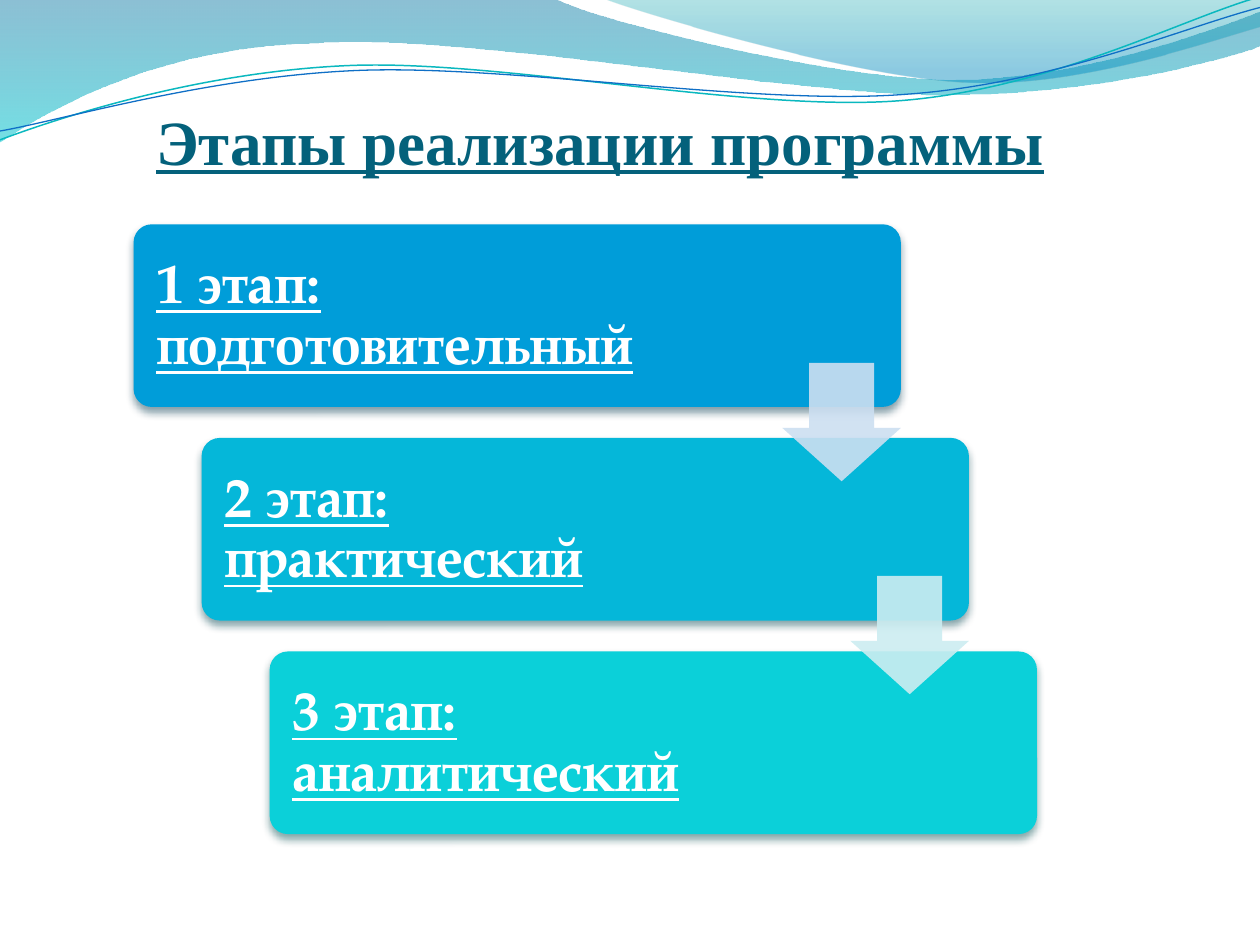
from math import cos, radians, sin

from lxml.etree import SubElement
from pptx import Presentation
from pptx.dml.color import RGBColor
from pptx.enum.shapes import MSO_SHAPE
from pptx.enum.text import MSO_ANCHOR, MSO_AUTO_SIZE, PP_ALIGN
from pptx.oxml.ns import qn
from pptx.util import Inches, Pt

STAGES = [
    ("1 этап: подготовительный", "009DD9", "00374C"),
    ("2 этап: практический", "05B7D9", "00424E"),
    ("3 этап: аналитический", "0BD0D9", "024B4E"),
]
ARROW_COLORS = ["CCDFF1", "CCEDF1"]
STEP_X, STEP_Y, ARROW_STEP_Y = 0.54, 1.695, 1.69
TILT = -2.7

WIDE_WAVE = [
    (0, 0), (4.4, -0.01), (4.76, 0.17, 6.64, 0.63, 7.58, 0.63),
    (8.53, 0.63, 9.58, 0.26, 10, 0.09), (10.01, 0.36),
    (9.83, 0.44, 8.7, 0.76, 7.46, 0.75), (6.22, 0.75, 3.82, 0.28, 2.57, 0.34),
    (1.29, 0.36, 0.46, 0.83, -0.01, 1.13),
]
RIGHT_WAVE = [
    (4.79, -0.01), (5.09, 0.11, 6.82, 0.62, 7.69, 0.65),
    (8.56, 0.69, 9.61, 0.32, 10, 0.21), (10, 0),
]
TEAL_LINE = [
    (0, 1.11), (0.48, 0.93, 1.58, 0.57, 2.77, 0.52),
    (3.95, 0.47, 5.93, 0.89, 7.13, 0.8), (8.33, 0.71, 9.38, 0.15, 9.98, -0.02),
]
BLUE_LINE = [
    (0, 1.04), (0.47, 0.96, 1.64, 0.61, 2.83, 0.56),
    (4.03, 0.51, 5.97, 0.84, 7.17, 0.75), (8.36, 0.67, 9.41, 0.21, 10, 0.06),
]


def color(value):
    """Turn a hex string into a colour."""
    return RGBColor.from_string(value)


def set_alpha(node, percent):
    """Give a colour element its opacity."""
    SubElement(node, qn("a:alpha"), val=str(percent * 1000))


def write(frame, text, font, size, fill, anchor=MSO_ANCHOR.TOP, inset=None, spacing=None):
    """Fill a text frame with one bold, underlined paragraph."""
    frame.word_wrap = True
    frame.vertical_anchor = anchor
    if inset is not None:
        frame.margin_left = frame.margin_right = Inches(inset)
        frame.margin_top = frame.margin_bottom = Inches(inset)
    para = frame.paragraphs[0]
    para.alignment = PP_ALIGN.LEFT
    para.line_spacing = spacing
    span = para.add_run()
    span.text = text
    span.font.name, span.font.size = font, Pt(size)
    span.font.bold = span.font.underline = True
    span.font.color.rgb = color(fill)


def rotate(point, center, degrees):
    """Turn a point clockwise around a center."""
    angle = radians(degrees)
    x, y = point[0] - center[0], point[1] - center[1]
    return (center[0] + x * cos(angle) - y * sin(angle),
            center[1] + x * sin(angle) + y * cos(angle))


class SlideBuilder:
    """Hold the style and the current slide."""

    title_font = "Times New Roman"
    body_font = "TeX Gyre Pagella"

    def __init__(self, deck):
        """Add a slide that has only a title."""
        self.page = deck.slides.add_slide(deck.slide_layouts[5])
        self.shapes = self.page.shapes

    def outline(self, segments, closed, center=(0, 0), tilt=0):
        """Draw an outline of lines and cubic curves."""
        points = [
            tuple(Inches(value) for value in rotate(segment[i:i + 2], center, -tilt))
            for segment in segments for i in range(0, len(segment), 2)
        ]
        builder = self.shapes.build_freeform(*points[0])
        builder.add_line_segments(points[1:], close=closed)
        shape = builder.convert_to_shape()
        lines = iter(list(shape._element.spPr.iter(qn("a:lnTo"))))
        for segment in segments[1:]:
            line = next(lines)
            if len(segment) == 6:
                line.tag = qn("a:cubicBezTo")
                for extra in (next(lines), next(lines)):
                    line.append(extra[0])
                    extra.getparent().remove(extra)
        shape.rotation = tilt
        shape.shadow.inherit = False
        return shape

    def wave(self, segments, stops):
        """Draw a wave with a translucent vertical gradient."""
        shape = self.outline(segments, True)
        shape.line.fill.background()
        shape.fill.gradient()
        shape.fill.gradient_angle = 270
        for stop, (position, value, opacity) in zip(shape.fill.gradient_stops, stops):
            stop.position = position
            stop.color.rgb = color(value)
        nodes = shape._element.spPr.iter(qn("a:srgbClr"))
        for node, (position, value, opacity) in zip(list(nodes), stops):
            set_alpha(node, opacity)

    def curve(self, segments, center, value, width):
        """Draw an open, tilted curve."""
        shape = self.outline(segments, False, center, TILT)
        shape.fill.background()
        shape.line.color.rgb = color(value)
        shape.line.width = Pt(width)

    def title(self, text, left, top, width, height):
        """Place the title above the waves."""
        title = self.shapes.title
        title.left, title.top = Inches(left), Inches(top)
        title.width, title.height = Inches(width), Inches(height)
        write(title.text_frame, text, self.title_font, 36, "04617B")
        title.text_frame.auto_size = MSO_AUTO_SIZE.SHAPE_TO_FIT_TEXT
        self.shapes._spTree.append(title._element)

    def preset(self, kind, left, top, width, height, fill, adjustments):
        """Draw a plain preset shape."""
        shape = self.shapes.add_shape(
            kind, Inches(left), Inches(top), Inches(width), Inches(height))
        for index, value in enumerate(adjustments):
            shape.adjustments[index] = value
        shape.fill.solid()
        shape.fill.fore_color.rgb = color(fill)
        shape.line.fill.background()
        shape.shadow.inherit = False
        return shape

    def stage(self, text, left, top, fill, shadow):
        """Draw a shadowed card with its text."""
        card = self.preset(
            MSO_SHAPE.ROUNDED_RECTANGLE, left, top, 6.09, 1.45, fill, [0.1])
        effects = card._element.spPr.find(qn("a:effectLst"))
        outer = SubElement(
            effects, qn("a:outerShdw"), blurRad=str(Pt(4.5)), dist=str(Pt(3)),
            dir="5400000", rotWithShape="0")
        set_alpha(SubElement(outer, qn("a:srgbClr"), val=shadow), 48)
        box = self.shapes.add_textbox(
            Inches(left + 0.05), Inches(top + 0.04), Inches(4.52), Inches(1.37))
        write(box.text_frame, text, self.body_font, 32, "FFFFFF",
              anchor=MSO_ANCHOR.MIDDLE, inset=0.13, spacing=0.9)

    def arrow(self, left, top, fill):
        """Draw a translucent arrow to the next stage."""
        shape = self.preset(
            MSO_SHAPE.DOWN_ARROW, left, top, 0.94, 0.94, fill, [0.55, 0.45])
        set_alpha(next(shape._element.spPr.iter(qn("a:srgbClr"))), 90)


def main():
    """Build and save the deck."""
    deck = Presentation()
    deck.slide_width, deck.slide_height = Inches(10), Inches(7.5)
    slide = SlideBuilder(deck)
    slide.wave(WIDE_WAVE, [(0, "0074A1", 45), (1, "00C6CF", 55)])
    slide.wave(RIGHT_WAVE, [(0, "00A1A9", 30), (0.8, "008BBF", 45)])
    slide.curve(TEAL_LINE, (4.99, 0.58), "0AB8BF", 0.85)
    slide.curve(BLUE_LINE, (5, 0.59), "0F6FC6", 0.75)
    slide.title("Этапы реализации программы", 1.14, 0.76, 7.64, 0.71)
    for index, (text, fill, shadow) in enumerate(STAGES):
        slide.stage(text, 1.06 + index * STEP_X, 1.78 + index * STEP_Y, fill, shadow)
    for index, fill in enumerate(ARROW_COLORS):
        slide.arrow(6.21 + index * STEP_X, 2.88 + index * ARROW_STEP_Y, fill)
    deck.save("out.pptx")


if __name__ == "__main__":
    main()
